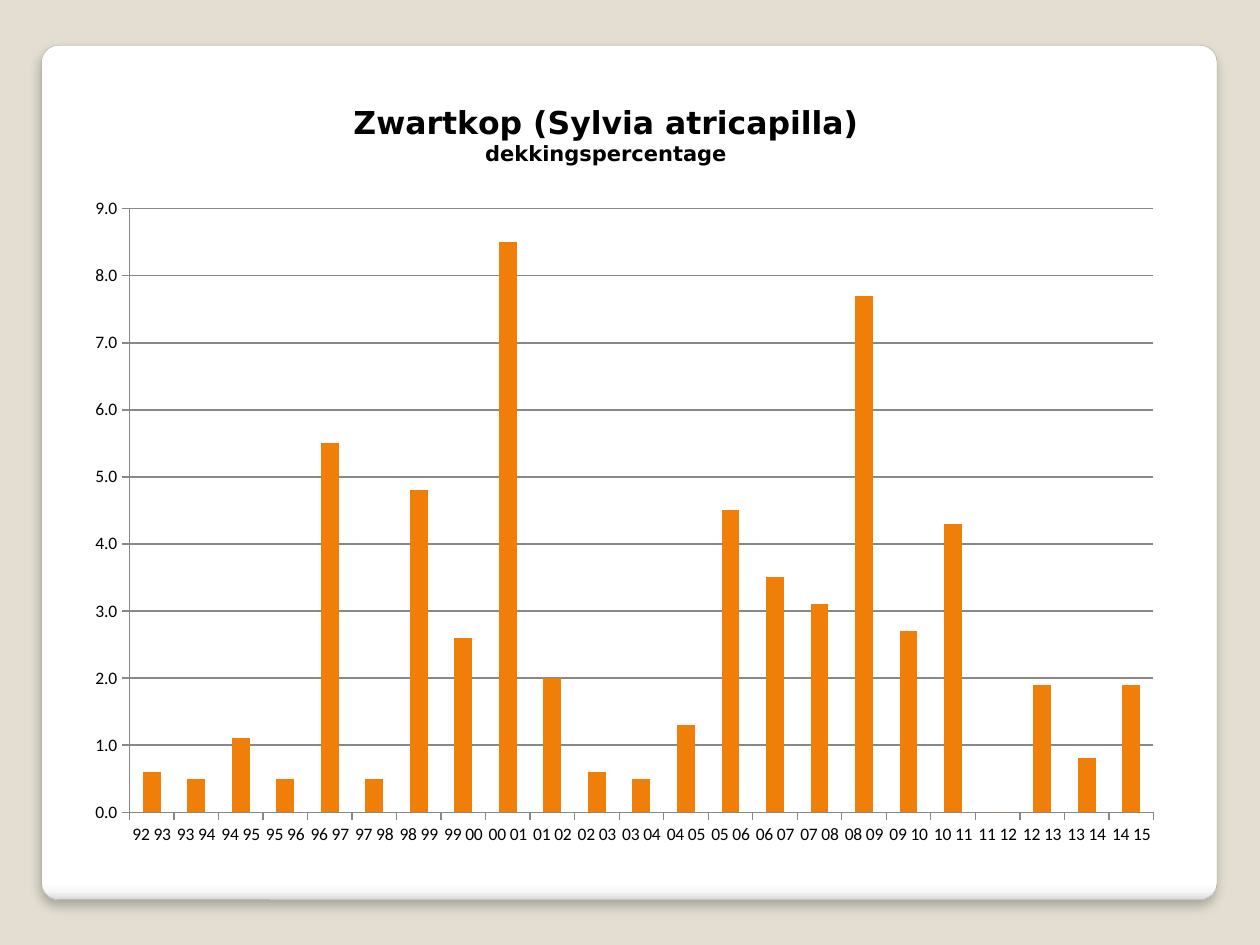
from lxml.etree import SubElement
from pptx import Presentation
from pptx.chart.data import CategoryChartData
from pptx.dml.color import RGBColor
from pptx.enum.chart import XL_CHART_TYPE as ChartType, XL_TICK_MARK as TickMark
from pptx.enum.shapes import MSO_SHAPE as Preset
from pptx.enum.text import PP_ALIGN as Align
from pptx.oxml.ns import qn
from pptx.util import Inches, Pt

COLORS = {
    "background": "E3DED1", "white": "FFFFFF", "edge_light": "F7F7F7",
    "edge_dark": "DADADA", "outline": "A4A4A4", "shadow": "000000",
    "text": "000000", "grid": "888888", "bar": "F07F09",
}
FIRST_WINTER = 1992
COVERAGE = [0.6, 0.5, 1.1, 0.5, 5.5, 0.5, 4.8, 2.6, 8.5, 2, 0.6, 0.5,
            1.3, 4.5, 3.5, 3.1, 7.7, 2.7, 4.3, 0, 1.9, 0.8, 1.9]


def rgb(name):
    return RGBColor.from_string(COLORS[name])


def winter_label(year):
    """Two-digit years of one winter, such as 99 00."""
    return f"{year % 100:02d} {(year + 1) % 100:02d}"


def format_font(font, size=10, name="Calibri", color="text", bold=False):
    font.size, font.name, font.bold = Pt(size), name, bold
    font.color.rgb = rgb(color)


def add_text(para, text, **font_format):
    para.alignment = Align.CENTER
    span = para.add_run()
    span.text = text
    format_font(span.font, **font_format)


def add_xml(parent, tag, **attributes):
    return SubElement(parent, qn(tag), {key: str(value) for key, value in attributes.items()})


def set_layout(element, inner=False, **fractions):
    """Place a chart part by fractions of the chart's size."""
    for old in element.findall(qn("c:layout")):
        element.remove(old)
    layout = add_xml(element, "c:layout")
    manual = add_xml(layout, "c:manualLayout")
    if inner:
        add_xml(manual, "c:layoutTarget", val="inner")
    for side in ("x", "y"):
        add_xml(manual, f"c:{side}Mode", val="edge")
    for key, value in fractions.items():
        add_xml(manual, f"c:{key}", val=value)
    element.remove(layout)
    element.insert(1 if element.find(qn("c:tx")) is not None else 0, layout)


class SlideBuilder:
    """Holds the style and the current slide."""

    def __init__(self, slide):
        self.slide = slide
        slide.background.fill.solid()
        slide.background.fill.fore_color.rgb = rgb("background")

    def card(self, left, top, width, height):
        """Rounded panel with a darker lower edge and a soft shadow."""
        box = self.slide.shapes.add_shape(
            Preset.ROUNDED_RECTANGLE, *map(Inches, (left, top, width, height)))
        box.adjustments[0] = 0.02
        box.line.color.rgb = rgb("outline")
        box.line.width = Pt(0.16)
        box.fill.gradient()
        box.fill.gradient_angle = 270
        properties = box.element.spPr
        stops = properties.find(".//" + qn("a:gsLst"))
        for stop in list(stops):
            stops.remove(stop)
        for percent, name in ((0, "white"), (98, "white"), (99, "edge_light"), (100, "edge_dark")):
            stop = add_xml(stops, "a:gs", pos=percent * 1000)
            add_xml(stop, "a:srgbClr", val=COLORS[name])
        box.shadow.inherit = False
        shadow = add_xml(properties.find(qn("a:effectLst")), "a:outerShdw",
                         blurRad=Pt(6), dist=Pt(4), dir=90 * 60000, algn="t", rotWithShape=0)
        color = add_xml(shadow, "a:srgbClr", val=COLORS["shadow"])
        add_xml(color, "a:alpha", val=25000)

    def column_chart(self, left, top, width, height, categories, values):
        data = CategoryChartData(number_format="0.0")
        data.categories = categories
        data.add_series("Series 1", values)
        chart = self.slide.shapes.add_chart(
            ChartType.COLUMN_CLUSTERED, *map(Inches, (left, top, width, height)), data).chart
        chart.has_legend = False
        format_font(chart.font)
        plot = chart.plots[0]
        plot.gap_width = 150
        plot.vary_by_categories = False
        bars = plot.series[0].format.fill
        bars.solid()
        bars.fore_color.rgb = rgb("bar")
        for axis in (chart.category_axis, chart.value_axis):
            axis.major_tick_mark = TickMark.OUTSIDE
            axis.format.line.color.rgb = rgb("grid")
            format_font(axis.tick_labels.font)
        scale = chart.value_axis
        scale.minimum_scale, scale.maximum_scale, scale.major_unit = 0, 9, 1
        scale.tick_labels.number_format = "0.0"
        scale.tick_labels.number_format_is_linked = False
        scale.major_gridlines.format.line.color.rgb = rgb("grid")
        set_layout(plot._element.getparent(), inner=True, x=0.05, y=0.17, w=0.93, h=0.77)
        return chart

    def chart_title(self, chart, lines, x, y):
        """Title of several lines, each given with its size."""
        title = chart.chart_title
        frame = title.text_frame
        for index, (text, size) in enumerate(lines):
            para = frame.add_paragraph() if index else frame.paragraphs[0]
            add_text(para, text, size=size, name="DejaVu Sans", bold=True)
        title.include_in_layout = False
        set_layout(title._element, x=x, y=y)


def main():
    deck = Presentation()
    deck.slide_width, deck.slide_height = Inches(10), Inches(7.5)
    page = SlideBuilder(deck.slides.add_slide(deck.slide_layouts[6]))
    page.card(0.33, 0.36, 9.33, 6.78)
    winters = [winter_label(FIRST_WINTER + index) for index in range(len(COVERAGE))]
    chart = page.column_chart(0.59, 0.6, 8.74, 6.22, winters, COVERAGE)
    page.chart_title(chart, [("Zwartkop (Sylvia atricapilla)", 18),
                             ("dekkingspercentage", 12)], x=0.25, y=0.03)
    deck.save("out.pptx")


if __name__ == "__main__":
    main()
